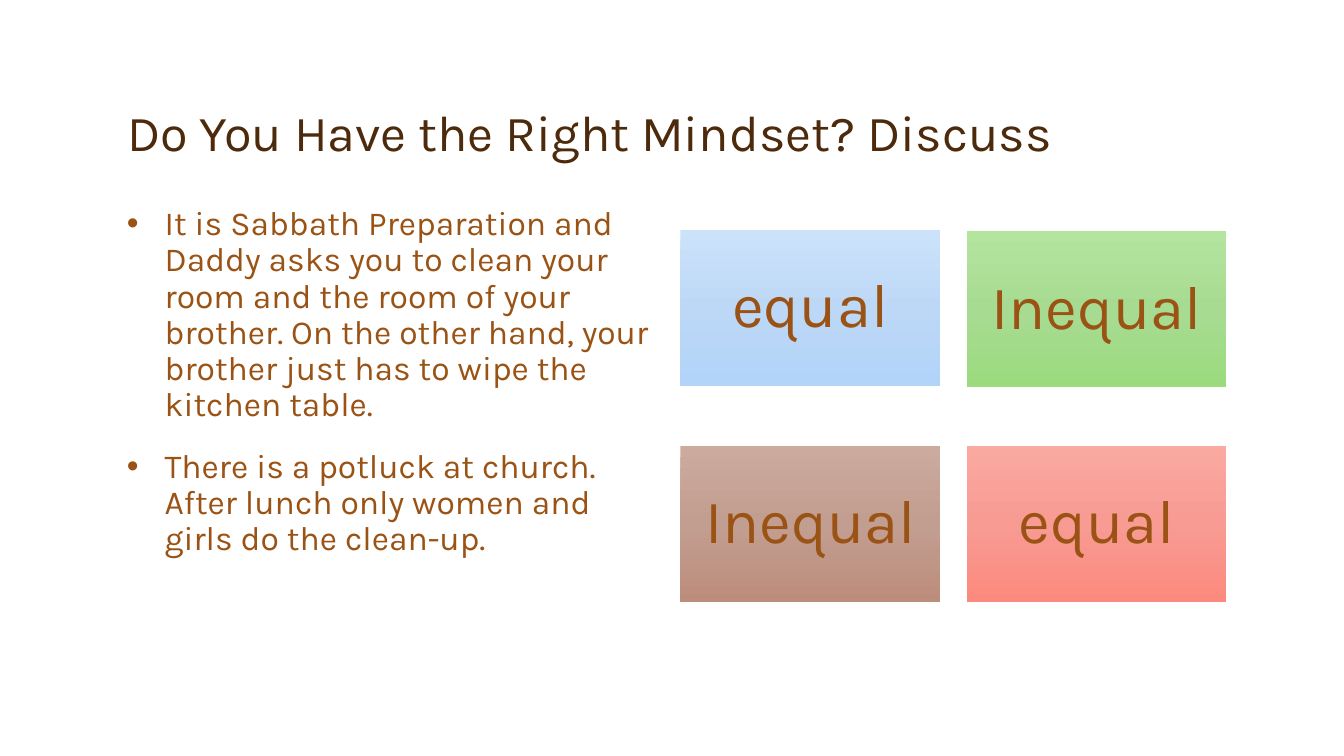
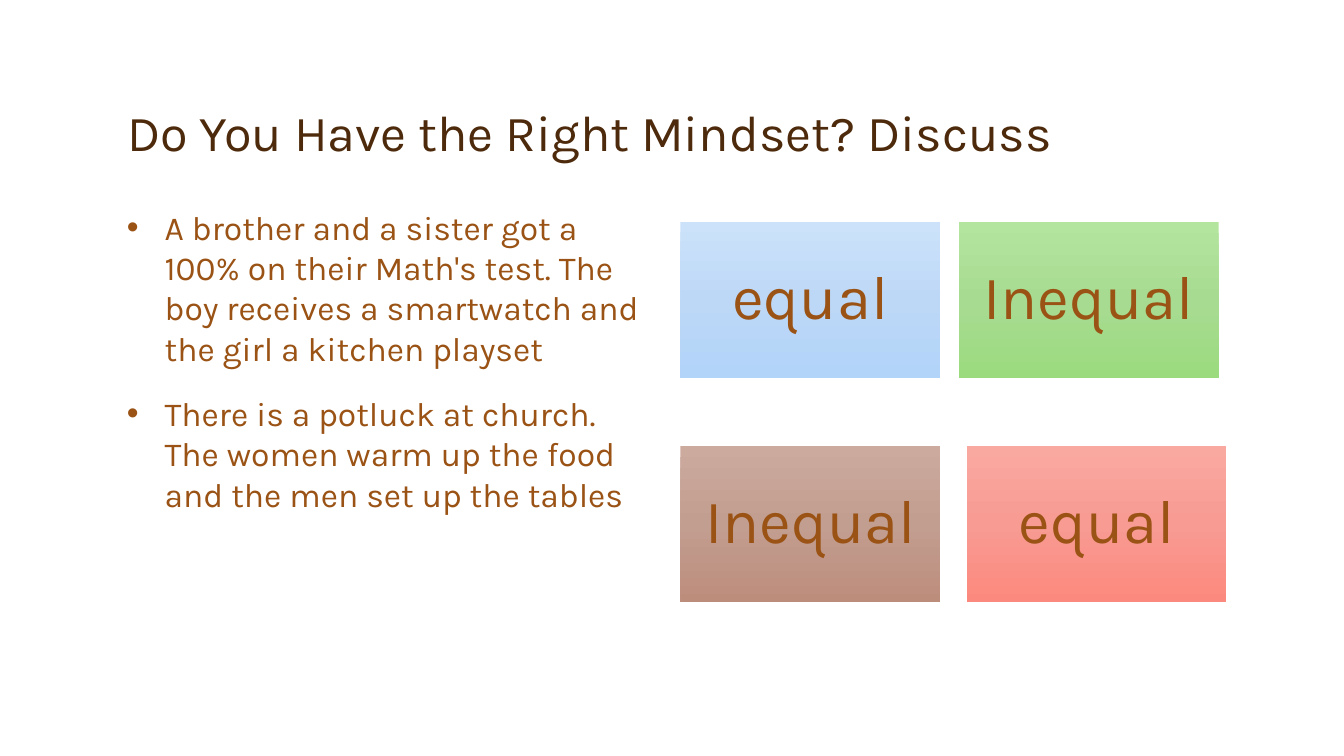
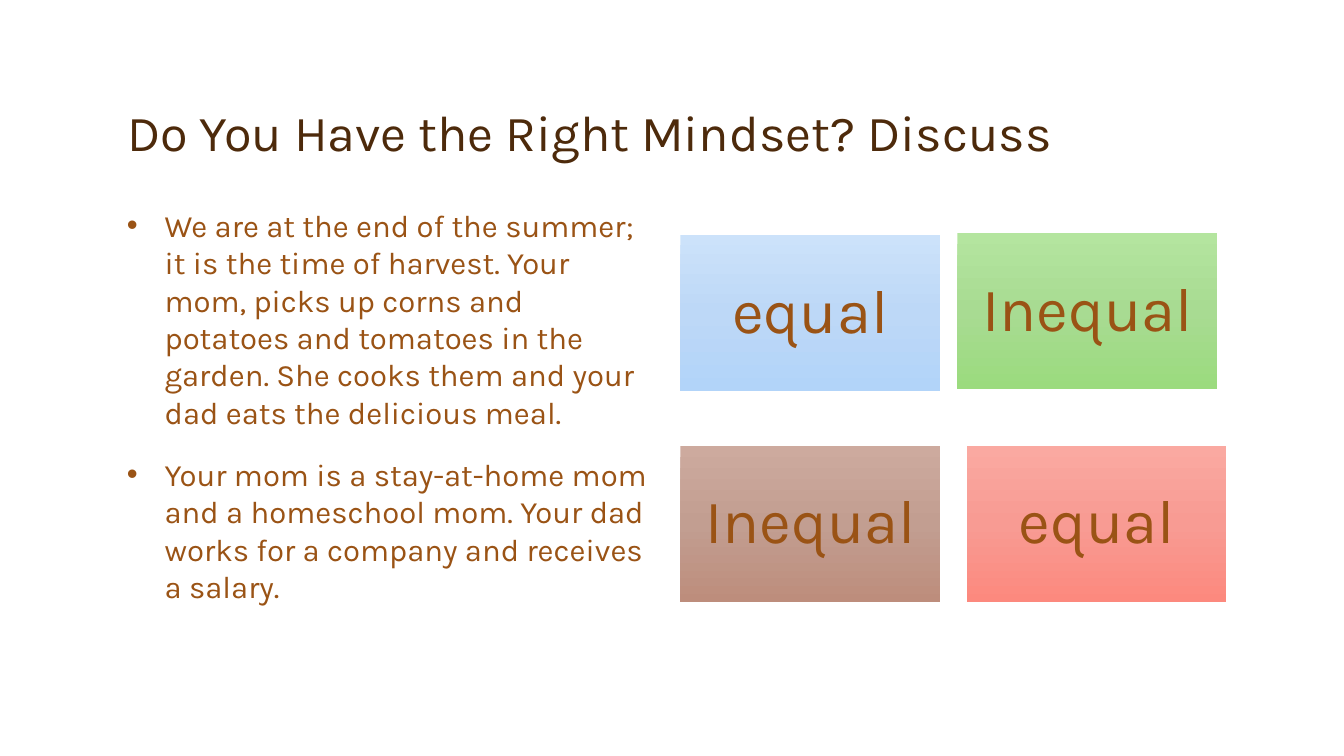
from copy import deepcopy

from pptx import Presentation
from pptx.dml.color import RGBColor
from pptx.enum.shapes import MSO_SHAPE
from pptx.enum.text import MSO_ANCHOR, MSO_AUTO_SIZE, PP_ALIGN
from pptx.oxml.ns import qn
from pptx.util import Cm, Pt

RECT = MSO_SHAPE.RECTANGLE
MIDDLE, BOTTOM = MSO_ANCHOR.MIDDLE, MSO_ANCHOR.BOTTOM
LEFT, CENTER = PP_ALIGN.LEFT, PP_ALIGN.CENTER
NO_FIT = MSO_AUTO_SIZE.NONE

# Shared style
FONT = "Karla"
DARK = RGBColor(0x4D, 0x2A, 0x0B)
BROWN = RGBColor(0x9A, 0x53, 0x15)
BLUES = [RGBColor(0xCC, 0xE2, 0xFA), RGBColor(0xBD, 0xD8, 0xF7), RGBColor(0xB2, 0xD4, 0xF9)]
GREENS = [RGBColor(0xB4, 0xE5, 0x9F), RGBColor(0xA8, 0xDB, 0x92), RGBColor(0x9B, 0xDB, 0x7E)]
TANS = [RGBColor(0xCD, 0xAA, 0x9E), RGBColor(0xC2, 0x9E, 0x91), RGBColor(0xBD, 0x8D, 0x7C)]
REDS = [RGBColor(0xFA, 0xA9, 0xA1), RGBColor(0xF8, 0x9B, 0x93), RGBColor(0xFC, 0x89, 0x7E)]

# Content
TITLE = "Do You Have the Right Mindset? Discuss"
CARDS = [("equal", BLUES), ("Inequal", GREENS), ("Inequal", TANS), ("equal", REDS)]
SLIDES = [
    {
        "size": 24, "lines": 0.9,
        "cases": [
            "It is Sabbath Preparation and Daddy asks you to clean your room and the room "
            "of your brother. On the other hand, your brother just has to wipe the kitchen table.",
            "There is a potluck at church. After lunch only women and girls do the clean-up.",
        ],
        "top": [(17.15, 5.79), (24.36, 5.82)],
    },
    {
        "size": 24, "lines": 1.0,
        "cases": [
            "A brother and a sister got a 100% on their Math's test. The boy receives "
            "a smartwatch and the girl a kitchen playset",
            "There is a potluck at church. The women warm up the food and the men set up the tables",
        ],
        "top": [(17.15, 5.59), (24.16, 5.59)],
    },
    {
        "size": 22.2, "lines": 1.0,
        "cases": [
            "We are at the end of the summer; it is the time of harvest. Your mom, picks up "
            "corns and potatoes and tomatoes in the garden. She cooks them and your dad eats "
            "the delicious meal.",
            "Your mom is a stay-at-home mom and a homeschool mom. Your dad works for a company "
            "and receives a salary.",
        ],
        "top": [(17.15, 5.92), (24.13, 5.87)],
    },
]

# Lengths in cm
BASE = [(17.15, 11.23), (24.36, 11.23)]
CARD_W, CARD_H = 6.55, 3.94
EDGE = 2.95
INDENT = Cm(0.95)
PAD = Cm(0.46)


def style(para, size, color, lines, align=LEFT):
    para.alignment = align
    para.line_spacing = lines
    para.font.name = FONT
    para.font.size = Pt(size)
    para.font.color.rgb = color


def add_title(slide):
    head = slide.shapes.title
    head.left, head.top, head.width, head.height = Cm(EDGE), Cm(0.84), Cm(27.94), Cm(3.38)
    frame = head.text_frame
    frame.text = TITLE
    frame.auto_size = NO_FIT
    frame.vertical_anchor = BOTTOM
    style(frame.paragraphs[0], 36, DARK, 0.9)


def add_cases(slide, cases, size, lines):
    box = slide.shapes.add_textbox(Cm(EDGE), Cm(5.08), Cm(13.77), Cm(11.63))
    frame = box.text_frame
    frame.word_wrap = True
    frame.text = "\n".join(cases)
    for i, para in enumerate(frame.paragraphs):
        props = para._p.get_or_add_pPr()
        props.set("marL", str(INDENT))
        props.set("indent", str(-INDENT))
        face = props.makeelement(qn("a:buFont"), {"typeface": "Arial"})
        mark = props.makeelement(qn("a:buChar"), {"char": "•"})
        props.extend([face, mark])
        if i:
            para.space_before = Pt(18)
        style(para, size, BROWN, lines)


def shade(shape, colors):
    fill = shape.fill
    fill.gradient()
    fill.gradient_angle = 270
    stops = shape._element.spPr.find(qn("a:gradFill")).find(qn("a:gsLst"))
    stops.insert(1, deepcopy(stops[0]))
    for stop, color, place in zip(fill.gradient_stops, colors, (0, 0.5, 1)):
        stop.color.rgb = color
        stop.position = place


def add_card(slide, text, colors, left, top):
    card = slide.shapes.add_shape(RECT, Cm(left), Cm(top), Cm(CARD_W), Cm(CARD_H))
    card.shadow.inherit = False
    card.line.fill.background()
    shade(card, colors)
    frame = card.text_frame
    frame.margin_left = frame.margin_right = frame.margin_top = frame.margin_bottom = PAD
    frame.vertical_anchor = MIDDLE
    frame.text = text
    style(frame.paragraphs[0], 44, BROWN, 0.9, CENTER)


def main():
    deck = Presentation()
    deck.slide_width, deck.slide_height = Cm(33.87), Cm(19.05)
    for page in SLIDES:
        slide = deck.slides.add_slide(deck.slide_layouts[5])
        add_title(slide)
        add_cases(slide, page["cases"], page["size"], page["lines"])
        for (text, colors), spot in zip(CARDS, page["top"] + BASE):
            add_card(slide, text, colors, *spot)
    deck.save("out.pptx")


if __name__ == "__main__":
    main()
